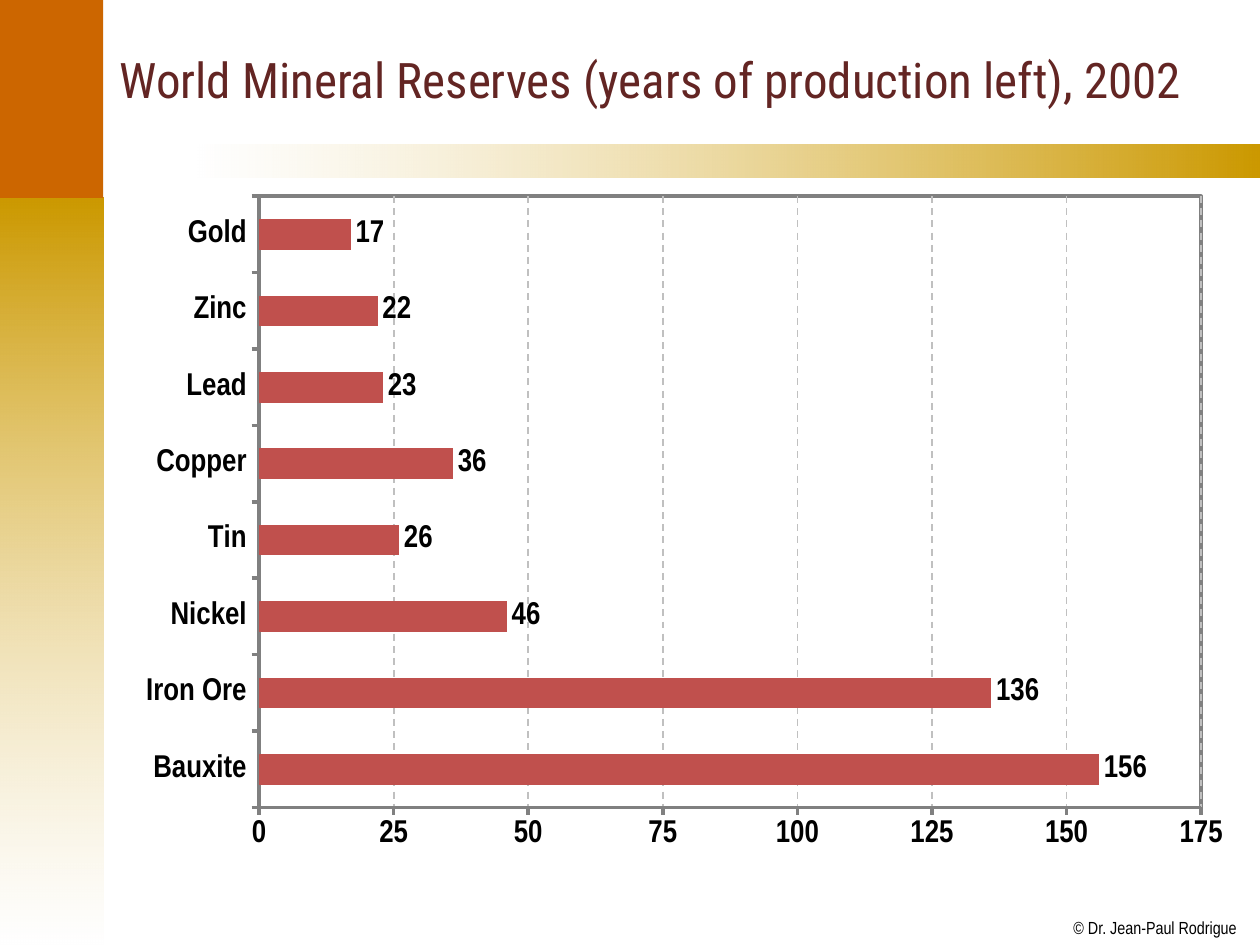
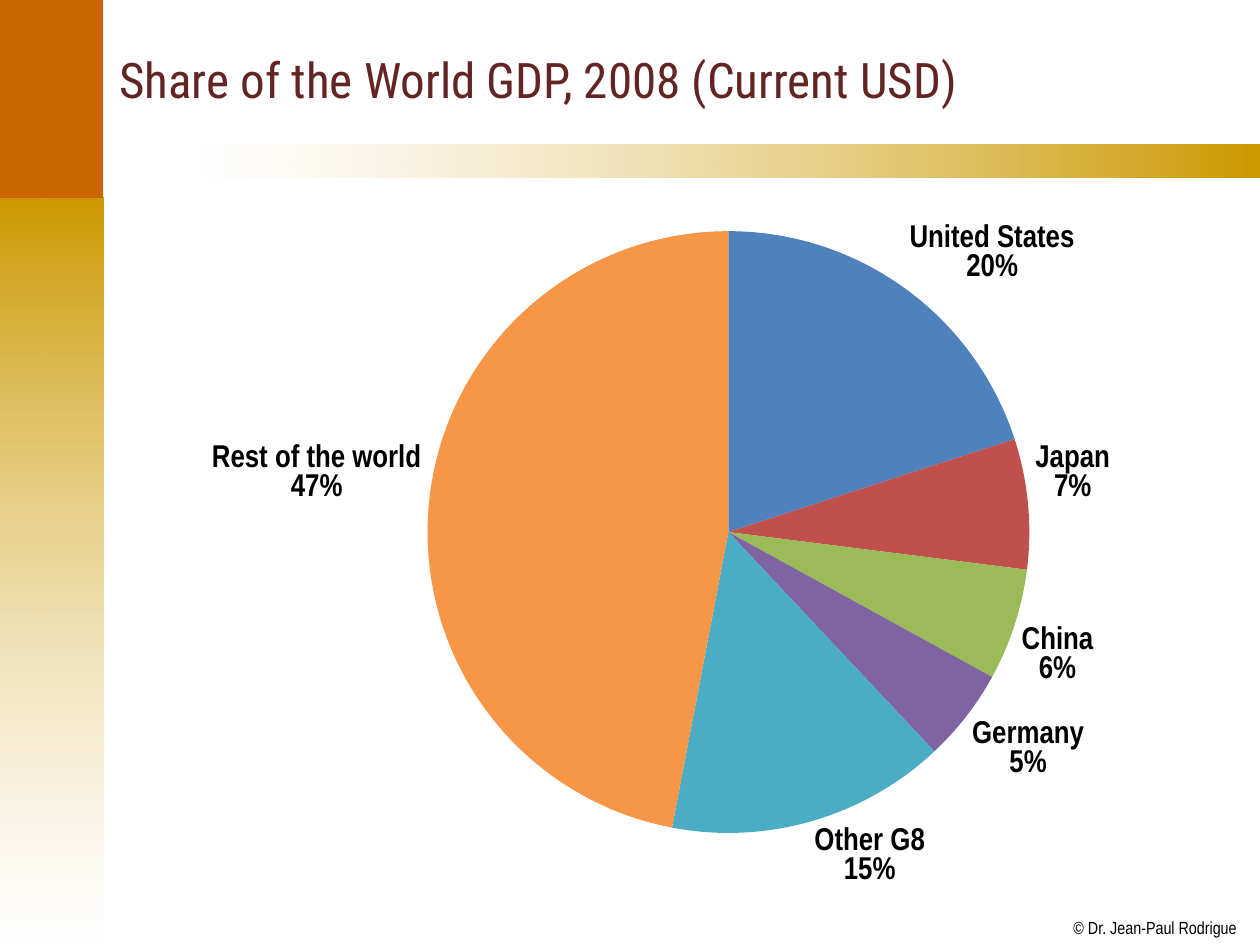
from lxml import etree
from pptx import Presentation
from pptx.chart.data import CategoryChartData
from pptx.dml.color import RGBColor
from pptx.enum.chart import XL_CHART_TYPE as ChartType
from pptx.enum.chart import XL_LABEL_POSITION as LabelPosition
from pptx.enum.chart import XL_TICK_MARK as TickMark
from pptx.enum.dml import MSO_LINE
from pptx.enum.shapes import MSO_SHAPE
from pptx.enum.text import MSO_ANCHOR, MSO_AUTO_SIZE
from pptx.oxml import parse_xml
from pptx.oxml.ns import nsdecls, qn
from pptx.util import Inches, Pt

RESERVES_TITLE = "World Mineral Reserves (years of production left), 2002"
RESERVES = [("Bauxite", 156), ("Iron Ore", 136), ("Nickel", 46), ("Tin", 26),
            ("Copper", 36), ("Lead", 23), ("Zinc", 22), ("Gold", 17)]
GDP_TITLE = "Share of the World GDP, 2008 (Current USD)"
GDP_SHARES = [("United States", 20, "4F81BD"), ("Japan", 7, "C0504D"),
              ("China", 6, "9BBB59"), ("Germany", 5, "8064A2"),
              ("Other G8", 15, "4BACC6"), ("Rest of the world", 47, "F79646")]
CREDIT = "© Dr. Jean-Paul Rodrigue"

GOLD, ORANGE, MAROON = "CC9900", "CC6600", "632523"
BAR_RED, AXIS_GRAY, GRID_GRAY = "C0504D", "808080", "C0C0C0"
WHITE, BLACK = "FFFFFF", "000000"
TITLE_FONT, BODY_FONT = "Roboto Condensed", "Arial Narrow"

SIDE_LEFT, SIDE_WIDTH, SIDE_SPLIT = -0.01, 0.83, 1.57
SLIDE_WIDTH, SLIDE_HEIGHT = 10, 7.5
CHART_BOX = (0.83, 1.43, 9.02, 5.79)


def rgb(color):
    return RGBColor.from_string(color)


def inches(box):
    return [Inches(length) for length in box]


def style_font(font, name, size, color, bold=False):
    font.name, font.size, font.bold = name, Pt(size), bold
    font.color.rgb = rgb(color)


def style_line(line, color, width):
    line.color.rgb = rgb(color)
    line.width = Pt(width)


def add_band(slide, box):
    band = slide.shapes.add_shape(MSO_SHAPE.RECTANGLE, *inches(box))
    band.shadow.inherit = False
    band.line.fill.background()
    return band


def fade(band, angle, *stops):
    band.fill.gradient()
    band.fill.gradient_angle = angle
    for stop, (position, color, opacity) in zip(band.fill.gradient_stops, stops):
        stop.position = position
        stop.color.rgb = rgb(color)
    colors = band._element.spPr.findall(".//" + qn("a:srgbClr"))
    for color_element, (_, _, opacity) in zip(colors, stops):
        if opacity < 100:
            alpha = etree.SubElement(color_element, qn("a:alpha"))
            alpha.set("val", str(opacity * 1000))


def add_text(slide, box, text, font, size, color):
    frame = slide.shapes.add_textbox(*inches(box)).text_frame
    frame.text = text
    style_font(frame.paragraphs[0].font, font, size, color)
    return frame


def add_slide(prs, title):
    slide = prs.slides.add_slide(prs.slide_layouts[6])
    side = add_band(slide, (SIDE_LEFT, SIDE_SPLIT, SIDE_WIDTH, SLIDE_HEIGHT - SIDE_SPLIT))
    fade(side, 270, (0, GOLD, 100), (1, WHITE, 51))
    rule = add_band(slide, (SIDE_SPLIT, 1.15, SLIDE_WIDTH - SIDE_SPLIT, 0.26))
    fade(rule, 0, (0, WHITE, 50), (1, GOLD, 100))
    corner = add_band(slide, (SIDE_LEFT, -0.01, SIDE_WIDTH, 1.58))
    corner.fill.solid()
    corner.fill.fore_color.rgb = rgb(ORANGE)

    credit = add_text(slide, (8.52, 7.28, 1.3, 0.17), CREDIT, BODY_FONT, 10, BLACK)
    credit.margin_left = credit.margin_right = credit.margin_top = credit.margin_bottom = 0
    credit.word_wrap = False
    credit.auto_size = MSO_AUTO_SIZE.SHAPE_TO_FIT_TEXT
    heading = add_text(slide, (0.85, 0.11, 8.98, 1.04), title, TITLE_FONT, 28, MAROON)
    heading.word_wrap = True
    heading.vertical_anchor = MSO_ANCHOR.MIDDLE
    return slide


def add_chart(slide, kind, names, values, plot_box):
    data = CategoryChartData()
    data.categories = names
    data.add_series("Series 1", values)
    chart = slide.shapes.add_chart(kind, *inches(CHART_BOX), data).chart
    chart.has_title = chart.has_legend = False
    style_font(chart.font, BODY_FONT, 18, BLACK, True)

    plot_area = chart._chartSpace.find(".//" + qn("c:plotArea"))
    for layout in plot_area.findall(qn("c:layout")):
        plot_area.remove(layout)
    sides = "".join(f'<c:{side} val="{part}"/>' for side, part in zip("xywh", plot_box))
    plot_area.insert(0, parse_xml(
        f'<c:layout {nsdecls("c")}><c:manualLayout><c:layoutTarget val="inner"/>'
        f'<c:xMode val="edge"/><c:yMode val="edge"/>{sides}</c:manualLayout></c:layout>'))

    plot = chart.plots[0]
    plot.vary_by_categories = kind == ChartType.PIE
    plot.has_data_labels = True
    labels = plot.data_labels
    style_font(labels.font, BODY_FONT, 18, BLACK, True)
    labels.position = LabelPosition.OUTSIDE_END
    return chart, plot, plot_area


def add_reserves_chart(slide):
    names, years = zip(*RESERVES)
    chart, plot, plot_area = add_chart(slide, ChartType.BAR_CLUSTERED, names, years,
                                       (0.136, 0.022, 0.829, 0.838))
    plot_area.append(parse_xml(
        f'<c:spPr {nsdecls("c", "a")}><a:solidFill><a:srgbClr val="{WHITE}"/></a:solidFill>'
        f'<a:ln w="{Pt(2)}"><a:solidFill><a:srgbClr val="{AXIS_GRAY}"/></a:solidFill></a:ln>'
        '</c:spPr>'))
    plot.gap_width = 150
    plot.data_labels.show_value = True
    bars = plot.series[0].format
    bars.fill.solid()
    bars.fill.fore_color.rgb = rgb(BAR_RED)

    for axis in (chart.category_axis, chart.value_axis):
        axis.major_tick_mark = TickMark.OUTSIDE
        axis.minor_tick_mark = TickMark.NONE
        style_font(axis.tick_labels.font, BODY_FONT, 18, BLACK, True)
        style_line(axis.format.line, AXIS_GRAY, 2)
    years_axis = chart.value_axis
    years_axis.minimum_scale, years_axis.maximum_scale = 0, 175
    years_axis.major_unit = 25
    grid = years_axis.major_gridlines.format.line
    style_line(grid, GRID_GRAY, 1)
    grid.dash_style = MSO_LINE.DASH


def add_gdp_chart(slide):
    names, shares, colors = zip(*GDP_SHARES)
    _, plot, _ = add_chart(slide, ChartType.PIE, names, shares, (0.284, 0.07, 0.53, 0.825))
    labels = plot.data_labels
    labels.show_value = False
    labels.show_category_name = labels.show_percentage = True
    labels.number_format, labels.number_format_is_linked = "0%", False
    separator = etree.Element(qn("c:separator"))
    separator.text = "\n"
    labels._element.find(qn("c:showBubbleSize")).addnext(separator)
    for index, color in enumerate(colors):
        wedge = plot.series[0].points[index].format
        wedge.fill.solid()
        wedge.fill.fore_color.rgb = rgb(color)
        wedge.line.fill.background()


def main():
    prs = Presentation()
    prs.slide_width, prs.slide_height = inches((SLIDE_WIDTH, SLIDE_HEIGHT))
    add_reserves_chart(add_slide(prs, RESERVES_TITLE))
    add_gdp_chart(add_slide(prs, GDP_TITLE))
    prs.save("out.pptx")


if __name__ == "__main__":
    main()
